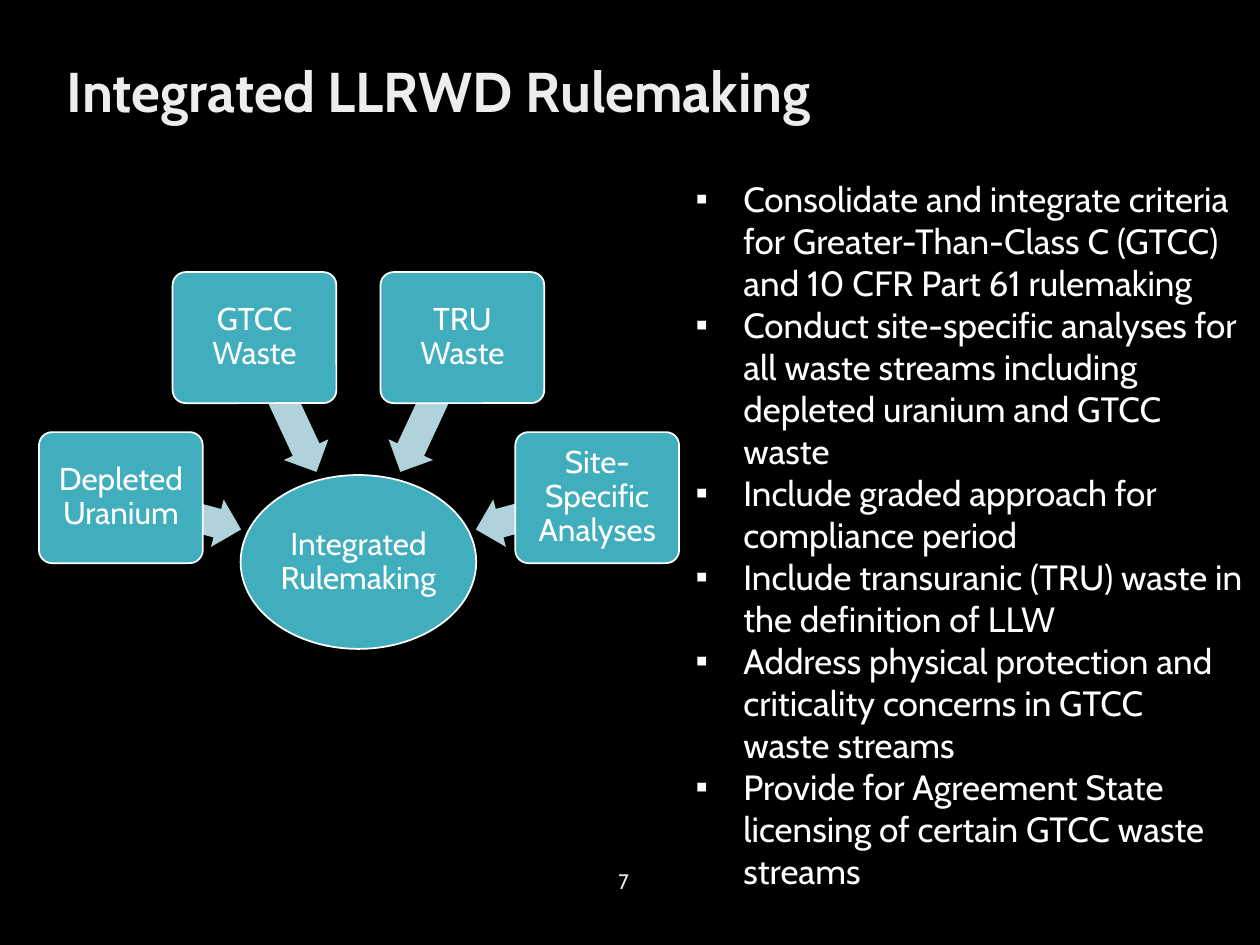
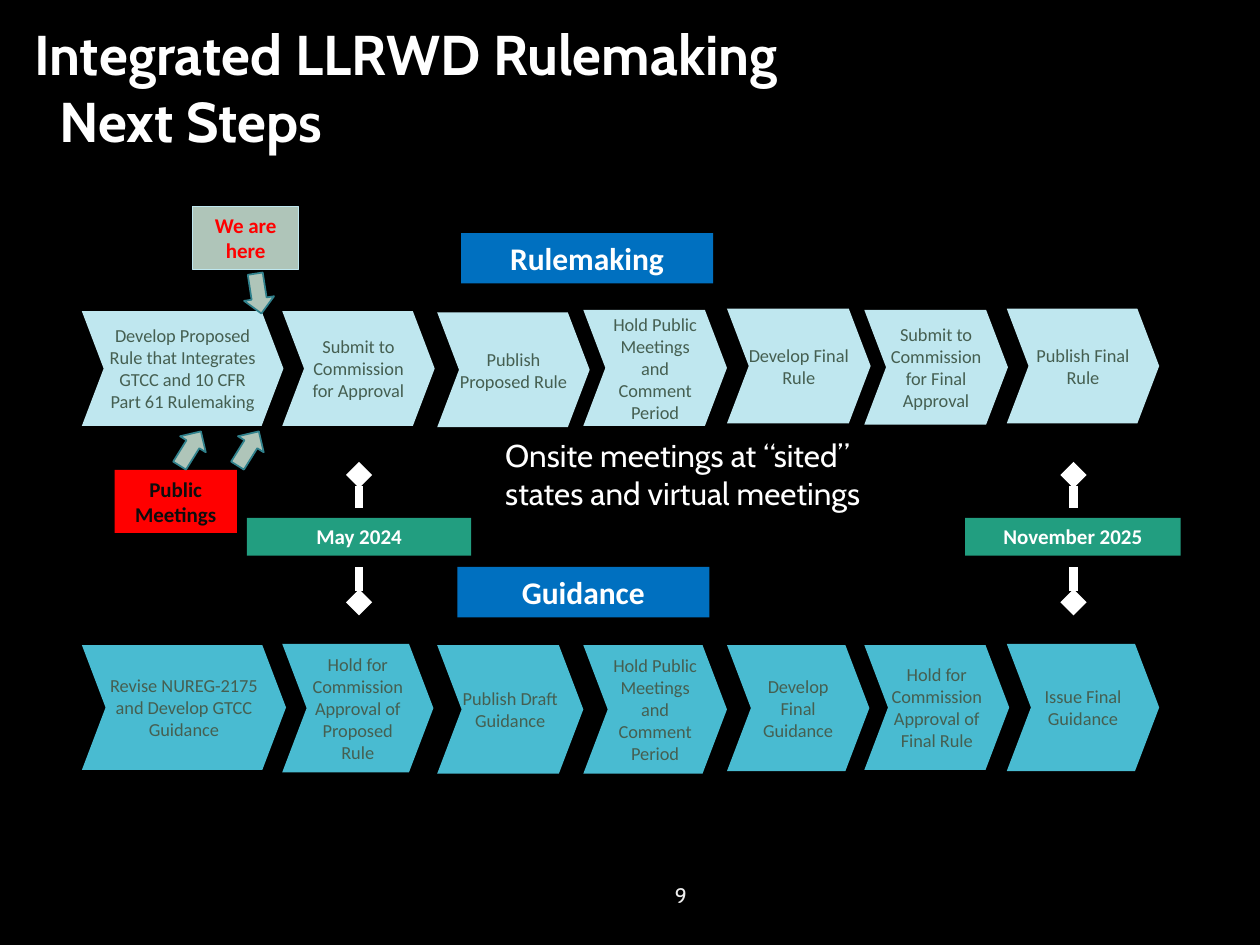
import lxml.etree
import pptx
import pptx.dml.color
import pptx.enum.shapes
import pptx.enum.text
import pptx.oxml.ns
import pptx.util

Inches = pptx.util.Inches
Pt = pptx.util.Pt
RGBColor = pptx.dml.color.RGBColor
Shape = pptx.enum.shapes.MSO_SHAPE
Anchor = pptx.enum.text.MSO_ANCHOR
Align = pptx.enum.text.PP_ALIGN
qn = pptx.oxml.ns.qn

BLACK = RGBColor(0x00, 0x00, 0x00)
WHITE = RGBColor(0xFF, 0xFF, 0xFF)
SILVER = RGBColor(0xED, 0xED, 0xED)
TEAL = RGBColor(0x41, 0xAE, 0xBD)
PALE_TEAL = RGBColor(0xB0, 0xD3, 0xDB)
RULE_BLUE = RGBColor(0xBF, 0xE7, 0xEF)
GUIDANCE_BLUE = RGBColor(0x49, 0xBB, 0xD1)
STEP_TEXT = RGBColor(0x45, 0x5F, 0x51)
DATE_GREEN = RGBColor(0x22, 0x9E, 0x80)
HEADING_BLUE = RGBColor(0x00, 0x70, 0xC0)
SAGE = RGBColor(0xAF, 0xC5, 0xB9)
ARROW_EDGE = RGBColor(0x30, 0x81, 0x8C)
RED = RGBColor(0xFF, 0x00, 0x00)
INK = RGBColor(0x0D, 0x0D, 0x0D)

TITLE_FONT = {"name": "Cabin", "size": Pt(32), "bold": True}
BODY_FONT = {"name": "Cabin", "size": Pt(20), "bold": False}
LABEL_FONT = {"name": "Cabin", "size": Pt(18), "bold": False}
NUMBER_FONT = {"name": "Cabin", "size": Pt(12), "bold": False}
STEP_FONT = {"name": "Calibri", "size": Pt(10.5), "bold": False}
TAG_FONT = {"name": "Calibri", "size": Pt(12), "bold": True}
HEADING_FONT = {"name": "Calibri", "size": Pt(18), "bold": True}

GOALS = [
    "Consolidate and integrate criteria for Greater-Than-Class C (GTCC) and 10 CFR Part 61 rulemaking",
    "Conduct site-specific analyses for all waste streams including depleted uranium and GTCC waste",
    "Include graded approach for compliance period",
    "Include transuranic (TRU) waste in the definition of LLW",
    "Address physical protection and\vcriticality concerns in GTCC\vwaste streams",
    "Provide for Agreement State licensing of certain GTCC waste streams",
]

INPUTS = [
    ("Depleted Uranium", (0.31, 3.43), (0.94, 3.88, 0.99, 0.39), 195),
    ("GTCC Waste", (1.37, 2.16), (1.68, 3.02, 1.17, 0.39), 245),
    ("TRU Waste", (3.02, 2.16), (2.84, 3.02, 1.17, 0.39), 295),
    ("Site-Specific Analyses", (4.09, 3.43), (3.76, 3.88, 0.99, 0.39), 345),
]

STEP_LEFTS = [0.65, 2.24, 3.47, 4.63, 5.77, 6.86, 7.99]
RULE_STEPS = [
    ("Develop Proposed Rule that Integrates GTCC and 10 CFR Part 61 Rulemaking", 2.47, 1.6, 0.91),
    ("Submit to Commission for Approval", 2.47, 1.21, 0.91),
    ("Publish Proposed Rule", 2.48, 1.21, 0.91),
    ("Hold Public Meetings and Comment Period", 2.46, 1.14, 0.92),
    ("Develop Final Rule", 2.45, 1.14, 0.91),
    ("Submit to Commission for Final Approval", 2.46, 1.14, 0.91),
    ("Publish Final Rule", 2.45, 1.21, 0.91),
]
GUIDANCE_STEPS = [
    ("Revise NUREG-2175 and Develop GTCC Guidance", 5.12, 1.62, 0.99),
    ("Hold for Commission Approval of Proposed Rule", 5.11, 1.2, 1.02),
    ("Publish Draft Guidance", 5.12, 1.16, 1.02),
    ("Hold Public Meetings and Comment Period", 5.12, 1.14, 1.02),
    ("Develop Final Guidance", 5.12, 1.13, 1.0),
    ("Hold for Commission Approval of Final Rule", 5.12, 1.15, 0.99),
    ("Issue Final Guidance", 5.11, 1.21, 1.01),
]


def apply(target, values):
    for name, value in values.items():
        setattr(target, name, value)


def place(shape, box):
    names = ("left", "top", "width", "height")
    apply(shape, dict(zip(names, map(Inches, box))))


def write(shape, texts, font, color, align=Align.LEFT, anchor=Anchor.TOP, margins=(0.1, 0.05), spacing=None):
    frame = shape.text_frame
    across, down = map(Inches, margins)
    apply(frame, {
        "word_wrap": True,
        "auto_size": pptx.enum.text.MSO_AUTO_SIZE.NONE,
        "vertical_anchor": anchor,
        "margin_left": across,
        "margin_right": across,
        "margin_top": down,
        "margin_bottom": down,
    })
    for index, text in enumerate(texts):
        paragraph = frame.add_paragraph() if index else frame.paragraphs[0]
        paragraph.text = text
        apply(paragraph, {"alignment": align, "space_before": Pt(0), "line_spacing": spacing})
        for run in paragraph.runs:
            apply(run.font, font)
            run.font.color.rgb = color
        for line_break in paragraph._p.findall(qn("a:br")):
            lxml.etree.SubElement(line_break, qn("a:rPr"), sz=str(int(font["size"].pt * 100)))
    return frame.paragraphs


def indent(paragraph, left, first=0, bullet=None):
    properties = paragraph._p.get_or_add_pPr()
    properties.set("marL", str(Inches(left)))
    properties.set("indent", str(Inches(first)))
    if bullet:
        lxml.etree.SubElement(properties, qn("a:buFont"), typeface="Arial")
        lxml.etree.SubElement(properties, qn("a:buChar"), char=bullet)


def add_title(slide, box, lines, color, spacing=None):
    place(slide.shapes.title, box)
    return write(slide.shapes.title, lines, TITLE_FONT, color, anchor=Anchor.MIDDLE, spacing=spacing)


def add_figure(slide, kind, box, fill, line=None, line_width=1, rotation=0, adjustments=()):
    shape = slide.shapes.add_shape(kind, *map(Inches, box))
    shape.shadow.inherit = False
    shape.rotation = rotation
    shape.fill.solid()
    shape.fill.fore_color.rgb = fill
    if line is None:
        shape.line.fill.background()
    else:
        shape.line.color.rgb = line
        shape.line.width = Pt(line_width)
    for index, value in enumerate(adjustments):
        shape.adjustments[index] = value
    return shape


def add_label_box(slide, box, text, fill, font, color, line=None):
    shape = add_figure(slide, Shape.RECTANGLE, box, fill, line, 0.75)
    write(shape, [text], font, color, Align.CENTER)


def add_node(slide, kind, box, text, margin, adjustments=()):
    shape = add_figure(slide, kind, box, TEAL, WHITE, adjustments=adjustments)
    write(shape, [text], LABEL_FONT, WHITE, Align.CENTER, Anchor.MIDDLE, (margin, margin), 0.9)


def add_step_row(slide, steps, fill):
    for left, (text, top, width, height) in zip(STEP_LEFTS, steps):
        shape = add_figure(slide, Shape.CHEVRON, (left, top, width, height), fill, adjustments=[0.19])
        write(shape, [text], STEP_FONT, STEP_TEXT, Align.CENTER, Anchor.MIDDLE, (0, 0.05))


def add_pointer(slide, left, top, rotation):
    add_figure(slide, Shape.RIGHT_ARROW, (left, top, 0.32, 0.24), SAGE, ARROW_EDGE, rotation=rotation)


def add_diamond_line(slide, x, start, end):
    connector = slide.shapes.add_connector(
        pptx.enum.shapes.MSO_CONNECTOR.STRAIGHT, Inches(x), Inches(start), Inches(x), Inches(end))
    connector.line.color.rgb = WHITE
    connector.line.width = Pt(5)
    lxml.etree.SubElement(connector.line._get_or_add_ln(), qn("a:tailEnd"), type="diamond")
    lxml.etree.SubElement(connector._element.spPr, qn("a:effectLst"))


def add_text(slide, box, text, font, color, **layout):
    shape = slide.shapes.add_textbox(*map(Inches, box))
    return write(shape, [text], font, color, **layout)


def add_slide_number(slide, box, number):
    add_text(slide, box, number, NUMBER_FONT, SILVER, align=Align.RIGHT, anchor=Anchor.MIDDLE)


def build_overview(presentation):
    slide = presentation.slides.add_slide(presentation.slide_layouts[1])
    add_title(slide, (0.43, 0.12, 9, 1.25), ["Integrated LLRWD Rulemaking"], SILVER, 0.9)
    add_slide_number(slide, (3.89, 6.79, 1.2, 0.4), "7")
    body = slide.placeholders[1]
    place(body, (5.39, 1.36, 4.61, 5.82))
    for paragraph in write(body, GOALS, BODY_FONT, WHITE):
        indent(paragraph, 0.41, -0.38, "▪")
    add_node(slide, Shape.OVAL, (1.91, 3.77, 1.87, 1.38), "Integrated Rulemaking", 0.01)
    for text, corner, arrow_box, rotation in INPUTS:
        add_figure(slide, Shape.LEFT_ARROW, arrow_box, PALE_TEAL, rotation=rotation, adjustments=[0.6, 0.5])
        add_node(slide, Shape.ROUNDED_RECTANGLE, (*corner, 1.3, 1.04), text, 0.04, [0.1])


def build_next_steps(presentation):
    slide = presentation.slides.add_slide(presentation.slide_layouts[5])
    title_lines = add_title(slide, (0.17, 0.23, 8.35, 0.91), ["Integrated LLRWD Rulemaking", "Next Steps"], WHITE)
    indent(title_lines[1], 0.2)
    add_step_row(slide, RULE_STEPS, RULE_BLUE)
    add_step_row(slide, GUIDANCE_STEPS, GUIDANCE_BLUE)
    for text, left, width, line_x in [("May 2024", 1.96, 1.78, 2.85), ("November 2025", 7.66, 1.71, 8.52)]:
        add_label_box(slide, (left, 4.11, width, 0.3), text, DATE_GREEN, TAG_FONT, WHITE)
        add_diamond_line(slide, line_x, 4.03, 3.77)
        add_diamond_line(slide, line_x, 4.5, 4.78)
    for text, left, top in [("Rulemaking", 3.66, 1.85), ("Guidance", 3.63, 4.5)]:
        add_label_box(slide, (left, top, 2, 0.4), text, HEADING_BLUE, HEADING_FONT, WHITE)
    add_label_box(slide, (0.91, 3.73, 0.97, 0.5), "Public Meetings", RED, TAG_FONT, INK)
    add_label_box(slide, (1.53, 1.64, 0.84, 0.5), "We are here", SAGE, TAG_FONT, RED, RULE_BLUE)
    for left, top, rotation in [(1.35, 3.44, 301.9), (1.81, 3.44, 301.9), (1.89, 2.21, 81.2)]:
        add_pointer(slide, left, top, rotation)
    note = add_text(slide, (3.19, 3.42, 4.03, 0.73), "Onsite meetings at “sited” states and virtual meetings",
                    LABEL_FONT, WHITE, margins=(0.07, 0.04))
    indent(note[0], 0.75)
    add_slide_number(slide, (4.86, 6.79, 0.69, 0.63), "9")


def main():
    presentation = pptx.Presentation()
    apply(presentation, {"slide_width": Inches(10), "slide_height": Inches(7.5)})
    background = presentation.slide_master.background.fill
    background.solid()
    background.fore_color.rgb = BLACK
    build_overview(presentation)
    build_next_steps(presentation)
    presentation.save("out.pptx")


if __name__ == "__main__":
    main()
